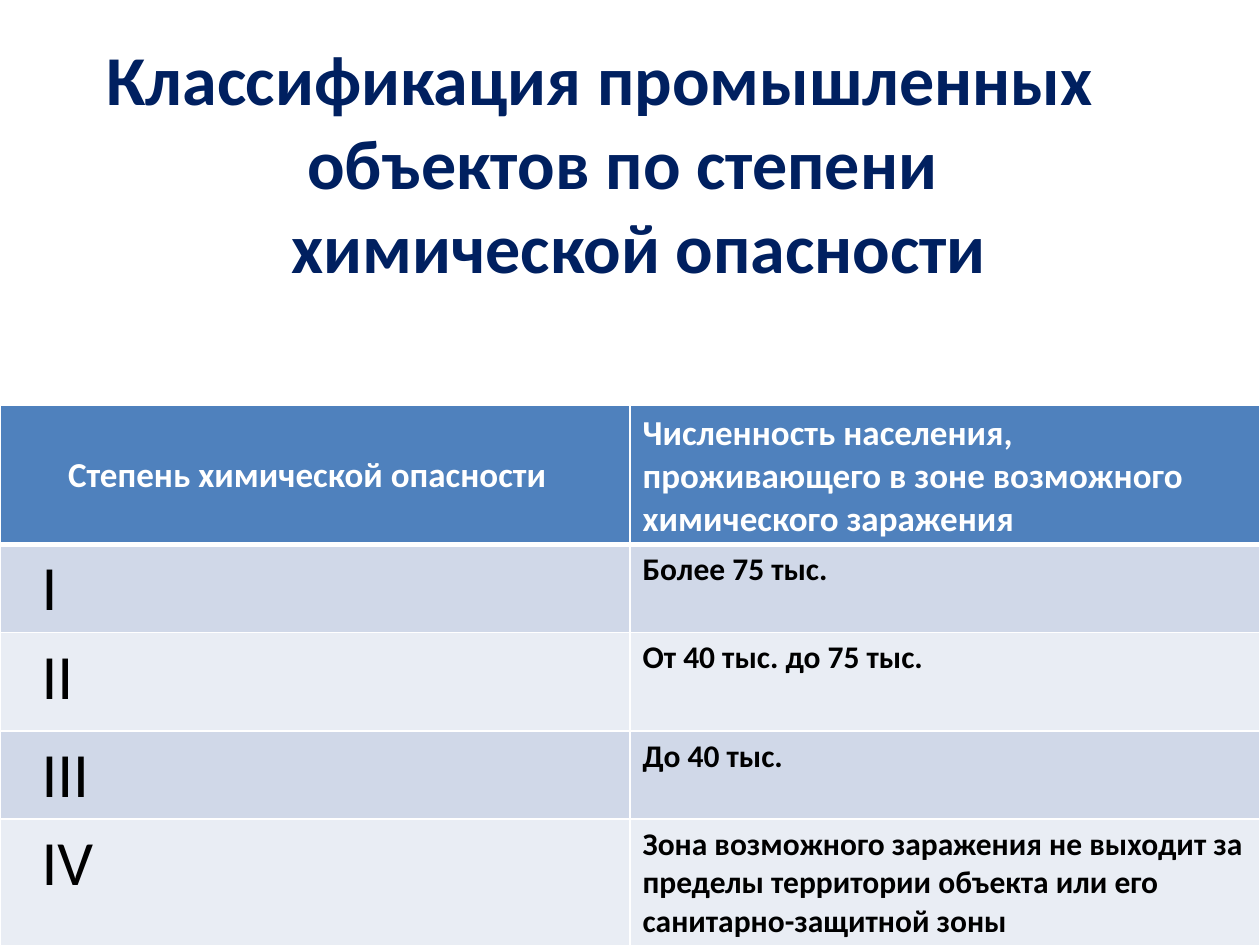
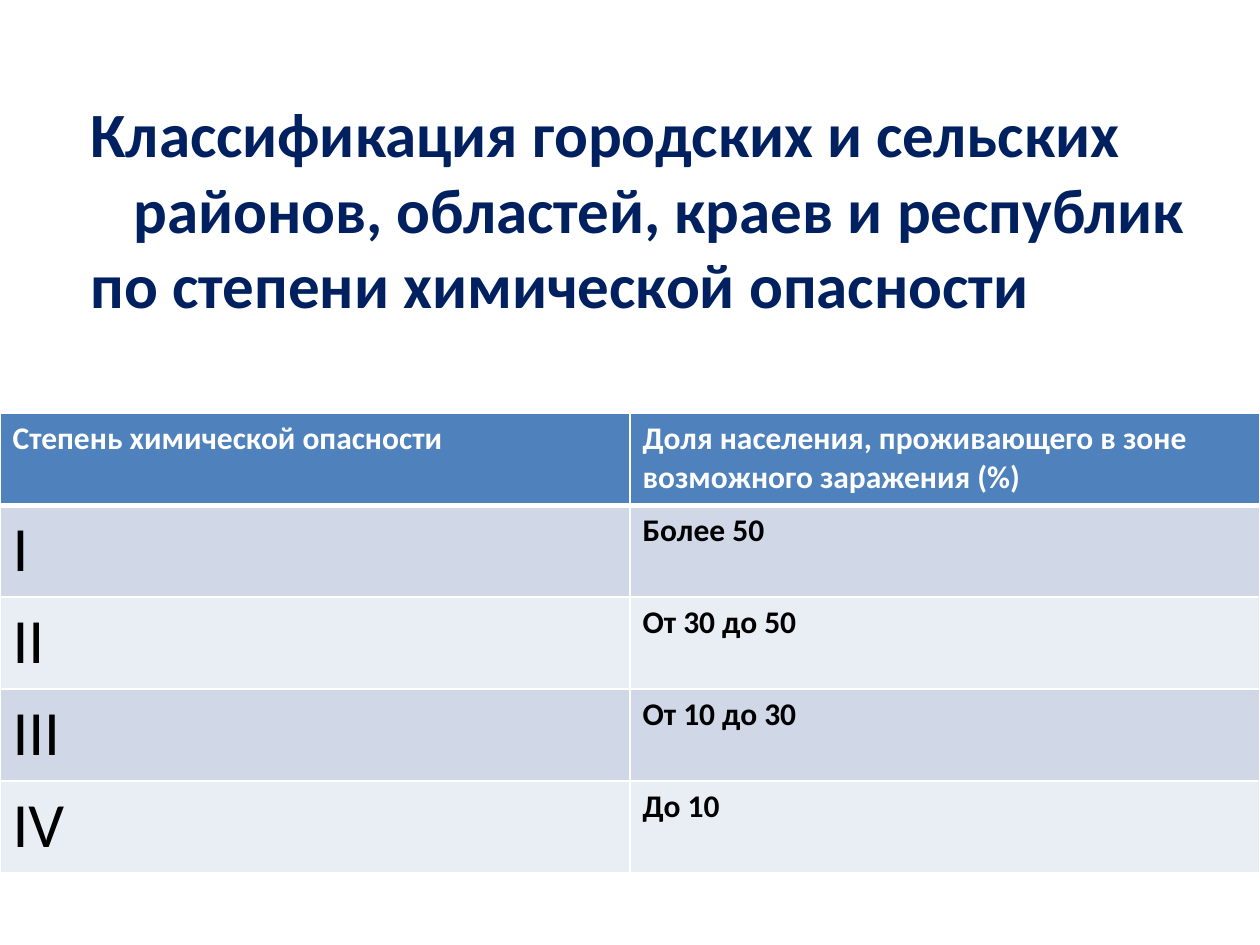
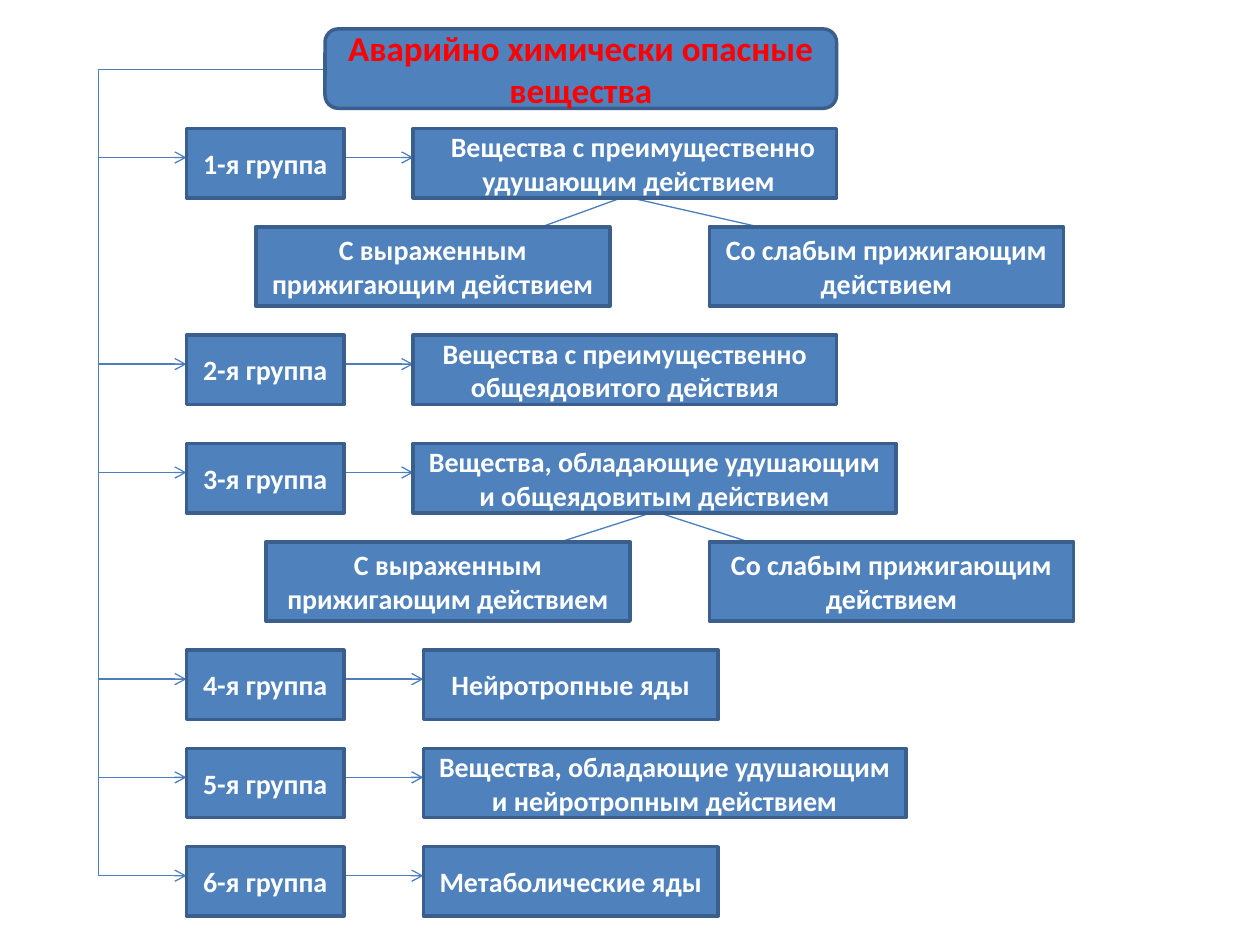
import pptx
import pptx.util
import pptx.dml.color
import pptx.enum.shapes
import pptx.enum.text
import pptx.oxml.ns
import lxml.etree

Inches = pptx.util.Inches
Pt = pptx.util.Pt
RGBColor = pptx.dml.color.RGBColor
Shape = pptx.enum.shapes.MSO_SHAPE
Align = pptx.enum.text.PP_ALIGN
Anchor = pptx.enum.text.MSO_ANCHOR
qn = pptx.oxml.ns.qn
Sub = lxml.etree.SubElement

FONT = "Calibri"
NAVY = RGBColor(0x00, 0x20, 0x60)
BLUE = RGBColor(0x4F, 0x81, 0xBD)
EDGE = RGBColor(0x3A, 0x5F, 0x8C)
LINK = RGBColor(0x4B, 0x7E, 0xBC)
RED = RGBColor(0xFF, 0x00, 0x00)
WHITE = RGBColor(0xFF, 0xFF, 0xFF)
BLACK = RGBColor(0x00, 0x00, 0x00)
BANDS = [RGBColor(0xE9, 0xED, 0xF4), RGBColor(0xD0, 0xD8, 0xE8)]


def write(frame, text, size, color, bold=True, align=Align.LEFT, indents=()):
    frame.text = text
    for para in frame.paragraphs:
        para.alignment = align
        for run in para.runs:
            run.font.name = FONT
            run.font.size = Pt(size)
            run.font.bold = bold
            run.font.color.rgb = color
    for para, indent in zip(frame.paragraphs, indents):
        para._p.get_or_add_pPr().set("marL", str(Inches(indent)))


def link(slide, x1, y1, x2, y2, arrow=False):
    line = slide.shapes.add_connector(
        pptx.enum.shapes.MSO_CONNECTOR.STRAIGHT,
        Inches(x1), Inches(y1), Inches(x2), Inches(y2))
    line.line.color.rgb = LINK
    line.line.width = Pt(0.75)
    if arrow:
        Sub(line.line._get_or_add_ln(), qn("a:tailEnd"), type="arrow")
    Sub(line._element.spPr, qn("a:effectLst"))


prs = pptx.Presentation()
prs.slide_width = Inches(10)
prs.slide_height = Inches(7.5)
blank = prs.slide_layouts[6]

pages = [
    {
        "title": "Классификация промышленных\nобъектов по степени\nхимической опасности",
        "at": (0.7, 0.23, 8.12, 2.12), "size": 40, "align": Align.CENTER,
        "indents": (0, 0.36, 0.62),
        "top": 3.22, "rows": (1.1, 0.7, 0.78, 0.7, 1), "head": 20,
        "anchor": Anchor.MIDDLE, "insets": (0.54, 0.33),
        "cells": [
            ("Степень химической опасности",
             "Численность населения, проживающего в зоне возможного химического заражения"),
            ("I", "Более 75 тыс."),
            ("II", "От 40 тыс. до 75 тыс."),
            ("III", "До 40 тыс."),
            ("IV", "Зона возможного заражения не выходит за пределы территории "
                   "объекта или его санитарно-защитной зоны"),
        ],
    },
    {
        "title": "Классификация городских и сельских\n"
                 "районов, областей, краев и республик\nпо степени химической опасности",
        "at": (0.62, 0.7, 9.08, 1.92), "size": 36, "align": Align.LEFT,
        "indents": (0, 0.34, 0),
        "top": 3.28, "rows": (0.73,) * 5, "head": 18,
        "anchor": Anchor.TOP, "insets": (0.1, 0.1),
        "cells": [
            ("Степень химической опасности",
             "Доля населения, проживающего в зоне возможного заражения (%)"),
            ("I", "Более 50"),
            ("II", "От 30 до 50"),
            ("III", "От 10 до 30"),
            ("IV", "До 10"),
        ],
    },
]

for page in pages:
    slide = prs.slides.add_slide(blank)
    title = slide.shapes.add_textbox(*map(Inches, page["at"]))
    title.text_frame.word_wrap = True
    write(title.text_frame, page["title"], page["size"], NAVY,
          align=page["align"], indents=page["indents"])

    rows = page["rows"]
    table = slide.shapes.add_table(
        len(rows), 2, 0, Inches(page["top"]), Inches(10), Inches(sum(rows))).table
    for r, (high, texts) in enumerate(zip(rows, page["cells"])):
        table.rows[r].height = Inches(high)
        for c, text in enumerate(texts):
            cell = table.cell(r, c)
            if r == 0:
                write(cell.text_frame, text, page["head"], WHITE)
            elif c == 0:
                write(cell.text_frame, text, 36, BLACK, bold=False)
            else:
                write(cell.text_frame, text, 18, BLACK)
            if c == 0:
                cell.margin_left = Inches(page["insets"][min(r, 1)])
            cell.vertical_anchor = page["anchor"] if r == 0 else Anchor.TOP
            props = cell._tc.get_or_add_tcPr()
            for side in "LRTB":
                thick = (r, side) in ((0, "B"), (1, "T"))
                edge = Sub(props, qn("a:ln" + side), w=str(Pt(3 if thick else 1)))
                fill = Sub(edge, qn("a:solidFill"))
                Sub(fill, qn("a:srgbClr"), val=str(WHITE))
            cell.fill.solid()
            cell.fill.fore_color.rgb = BLUE if r == 0 else BANDS[r % 2]

slide = prs.slides.add_slide(blank)
trunk = 0.78
left, wide, tall = 1.48, 1.25, 0.55
groups = [
    (1.02, 3.28, 3.36, "Вещества с преимущественно\nудушающим действием"),
    (2.66, 3.28, 3.36, "Вещества с преимущественно общеядовитого действия"),
    (3.52, 3.28, 3.83, "Вещества, обладающие удушающим и общеядовитым действием"),
    (5.16, 3.36, 2.34, "Нейротропные яды"),
    (5.94, 3.36, 3.83, "Вещества, обладающие удушающим и нейротропным действием"),
    (6.72, 3.36, 2.34, "Метаболические яды"),
]
forks = [
    (4.96, 1.56, 1.8, 2.81, (2.03, 5.63), (4.3, 6.02)),
    (5.2, 4.06, 4.3, 2.89, (2.11, 5.63), (4.45, 5.94)),
]
kinds = ("С выраженным прижигающим действием", "Со слабым прижигающим действием")

link(slide, 2.58, 0.55, trunk, 0.55)
link(slide, trunk, 0.55, trunk, 6.95)
boxes = [(2.58, 0.23, 4.06, 0.63, "Аварийно химически опасные вещества")]
for num, (top, start, span, text) in enumerate(groups, 1):
    mid = top + 0.23
    link(slide, trunk, mid, left, mid, arrow=True)
    link(slide, left + wide, mid, start, mid, arrow=True)
    boxes.append((left, top, wide, tall, f"{num}-я группа"))
    boxes.append((start, top, span, tall, text))
for x, y, top, span, starts, ends in forks:
    for start, end, kind in zip(starts, ends, kinds):
        link(slide, x, y, end, top)
        boxes.append((start, top, span, 0.63, kind))

for i, (*place, text) in enumerate(boxes):
    form = Shape.RECTANGLE if i else Shape.ROUNDED_RECTANGLE
    box = slide.shapes.add_shape(form, *map(Inches, place))
    box.shadow.inherit = False
    box.fill.solid()
    box.fill.fore_color.rgb = BLUE
    box.line.color.rgb = EDGE
    box.line.width = Pt(2)
    frame = box.text_frame
    frame.word_wrap = True
    frame.vertical_anchor = Anchor.MIDDLE
    split = "\n" in text
    write(frame, text, 16 if i else 20, WHITE if i else RED,
          align=Align.LEFT if split else Align.CENTER,
          indents=(0.2, 0.45) if split else ())

prs.save("out.pptx")
